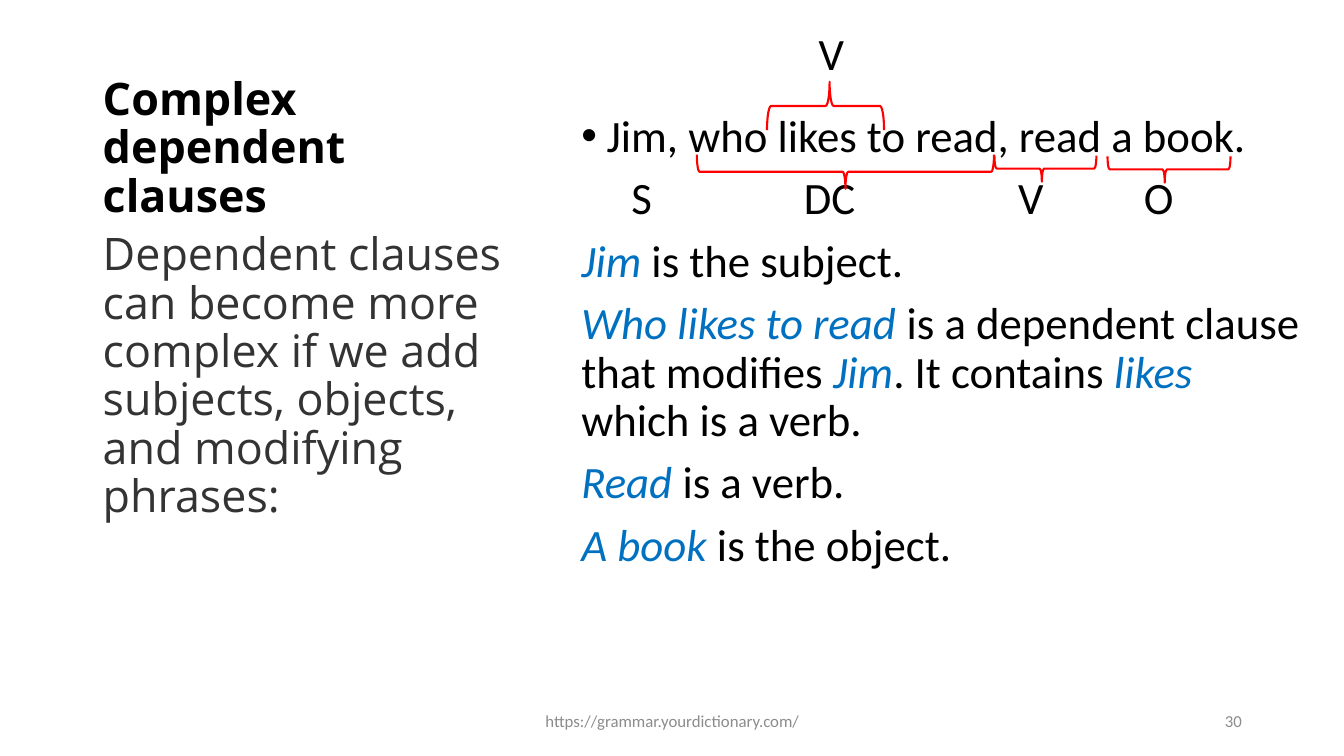
from pptx import Presentation
from pptx.dml.color import RGBColor
from pptx.enum.shapes import MSO_SHAPE
from pptx.enum.text import MSO_ANCHOR as ANCHOR, PP_ALIGN as ALIGN
from pptx.oxml.ns import qn
from pptx.util import Cm, Pt
from lxml.etree import SubElement

BLACK = RGBColor(0x00, 0x00, 0x00)
DARK = RGBColor(0x33, 0x33, 0x33)
GREY = RGBColor(0x8C, 0x8C, 0x8C)
BLUE = RGBColor(0x00, 0x70, 0xC0)
RED = RGBColor(0xFF, 0x00, 0x00)

LABELS = "\tS\tDC\tV\tO"
LABEL_STOPS = (1.52, 6.26, 11.33, 14.55)

# Each line is a list of (text, is an example) runs
EXPLANATION = [
    [("Jim, who likes to read, read a book.", False)],
    [(LABELS, False)],
    [("Jim", True), (" is the subject.", False)],
    [("Who likes to read ", True),
     ("is a dependent clause that modifies ", False), ("Jim", True),
     (". It contains ", False), ("likes ", True),
     ("which is a verb.", False)],
    [("Read ", True), ("is a verb.", False)],
    [("A book ", True), ("is the object.", False)],
]

# Left, top, width, height, pointing up
BRACES = [
    (17.56, 3.9, 7.49, 0.86, False),
    (19.33, 2.06, 2.95, 1.22, True),
    (25.06, 3.92, 2.57, 0.66, False),
    (27.91, 3.94, 3.1, 0.66, False),
]


def add_box(s, left, top, width, height, anchor=ANCHOR.TOP):
    tf = s.shapes.add_textbox(Cm(left), Cm(top), Cm(width), Cm(height)).text_frame
    tf.word_wrap = True
    tf.vertical_anchor = anchor
    return tf


def add_run(p, text, size=32, font="Calibri", color=BLACK, bold=False, italic=False):
    r = p.add_run()
    r.text = text
    r.font.size, r.font.name = Pt(size), font
    r.font.bold, r.font.italic = bold, italic
    r.font.color.rgb = color


def add_text(s, box, text, anchor=ANCHOR.TOP, align=ALIGN.LEFT, spacing=1.0, **style):
    p = add_box(s, *box, anchor).paragraphs[0]
    p.alignment = align
    p.line_spacing = spacing
    add_run(p, text, **style)


def add_bullet(p):
    pPr = p._p.get_or_add_pPr()
    pPr.set("marL", str(Cm(0.64)))
    pPr.set("indent", str(-Cm(0.64)))
    SubElement(pPr, qn("a:buFont"), typeface="Arial")
    SubElement(pPr, qn("a:buChar"), char="•")


def add_label_stops(p):
    """Centre each label under its part of the sentence."""
    tabs = SubElement(p._p.get_or_add_pPr(), qn("a:tabLst"))
    for stop in LABEL_STOPS:
        SubElement(tabs, qn("a:tab"), pos=str(Cm(stop)), algn="ctr")


def add_explanation(s):
    tf = add_box(s, 14.4, 2.74, 18.64, 13.54)
    for i, line in enumerate(EXPLANATION):
        p = tf.add_paragraph() if i else tf.paragraphs[0]
        p.line_spacing = 0.9
        p.space_before = Pt(10 if i else 0)
        if i == 0:
            add_bullet(p)
        elif line[0][0] == LABELS:
            add_label_stops(p)
        for text, example in line:
            add_run(p, text, color=BLUE if example else BLACK, italic=example)


def add_brace(s, left, top, width, height, up):
    """Turn a right brace so that it fills the given box."""
    shift = (width - height) / 2
    sp = s.shapes.add_shape(MSO_SHAPE.RIGHT_BRACE, Cm(left + shift),
                            Cm(top - shift), Cm(height), Cm(width))
    sp.rotation = 270 if up else 90
    sp.adjustments[0] = 0.083
    sp.adjustments[1] = 0.5 if width > 5 else 0.535
    sp.shadow.inherit = False
    sp.fill.background()
    sp.line.color.rgb = RED
    sp.line.width = Pt(1.5)


def main():
    prs = Presentation()
    prs.slide_width, prs.slide_height = Cm(33.87), Cm(19.05)
    s = prs.slides.add_slide(prs.slide_layouts[6])

    add_text(s, (2.34, 1.27, 10.92, 4.45), "Complex dependent clauses",
             ANCHOR.BOTTOM, spacing=0.9, font="Open Sans", bold=True)
    add_explanation(s)
    add_text(s, (2.34, 5.72, 10.92, 10.59),
             "Dependent clauses can become more complex if we add subjects, "
             "objects, and modifying phrases:",
             spacing=0.9, font="Open Sans", color=DARK)
    for brace in BRACES:
        add_brace(s, *brace)
    add_text(s, (20.29, 0.53, 1.32, 1.63), "V", align=ALIGN.CENTER)
    add_text(s, (11.23, 17.65, 11.43, 1.02), "https://grammar.yourdictionary.com/",
             ANCHOR.MIDDLE, ALIGN.CENTER, size=12, color=GREY)
    add_text(s, (23.93, 17.65, 7.62, 1.02), "30",
             ANCHOR.MIDDLE, ALIGN.RIGHT, size=12, color=GREY)

    prs.save("out.pptx")


if __name__ == "__main__":
    main()
